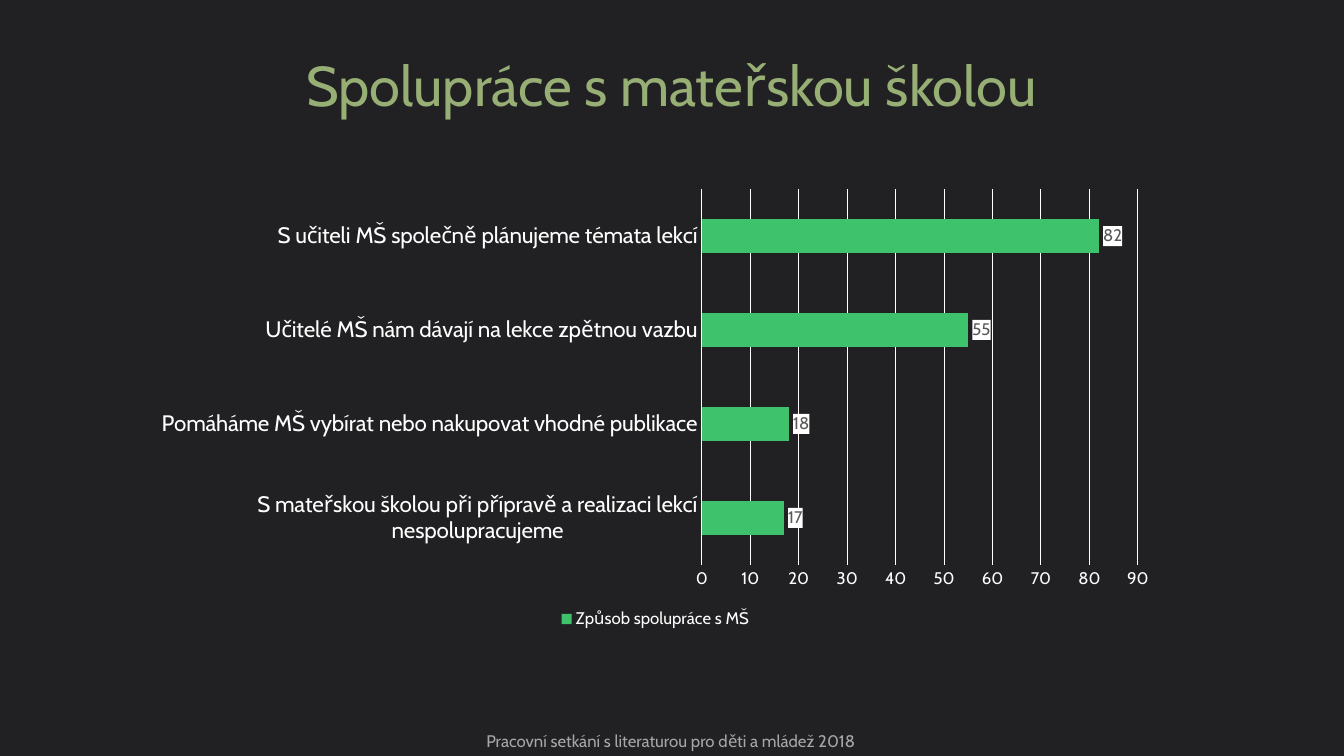
from dataclasses import dataclass

from lxml.etree import fromstring
from pptx import Presentation
from pptx.chart.data import CategoryChartData
from pptx.dml.color import RGBColor
from pptx.enum.chart import XL_CHART_TYPE, XL_LABEL_POSITION, XL_LEGEND_POSITION, XL_TICK_MARK
from pptx.enum.text import MSO_ANCHOR, PP_ALIGN
from pptx.oxml.ns import qn
from pptx.util import Emu, Pt

TITLE = "Spolupráce s mateřskou školou"
FOOTER = "Pracovní setkání s literaturou pro děti a mládež 2018"
SERIES = "Způsob spolupráce s MŠ"
ANSWERS = [
    ("S mateřskou školou při přípravě a realizaci lekcí nespolupracujeme", 17),
    ("Pomáháme MŠ vybírat nebo nakupovat vhodné publikace", 18),
    ("Učitelé MŠ nám dávají na lekce zpětnou vazbu", 55),
    ("S učiteli MŠ společně plánujeme témata lekcí", 82),
]

# left, top, width, height in px
SLIDE_SIZE = (1344, 756)
TITLE_BOX = (101, 31, 1141, 107)
FOOTER_BOX = (-1, 716, 1344, 40)
CHART_BOX = (142, 179, 1027, 454)
PLOT_BOX = (702, 189, 436, 376)


@dataclass(frozen=True)
class Theme:
    font: str = "Cabin"
    background: str = "212123"
    title: str = "97AF75"
    footer: str = "A6A6A6"
    light: str = "FFFFFF"
    bar: str = "3EC26C"
    label: str = "595959"
    outline: str = "404040"
    title_size: int = 40
    category_size: int = 16
    small_size: int = 12
    base_size: int = 10
    line: float = 0.75


THEME = Theme()
A_NS = 'xmlns:a="http://schemas.openxmlformats.org/drawingml/2006/main"'
C_NS = 'xmlns:c="http://schemas.openxmlformats.org/drawingml/2006/chart"'


def px(n):
    return Emu(round(n * 914400 / 100.8))


def rgb(value):
    return RGBColor.from_string(value)


def style_font(font, size, color):
    font.name = THEME.font
    font.size = Pt(size)
    font.bold = False
    font.color.rgb = rgb(color)


def style_line(line):
    line.color.rgb = rgb(THEME.light)
    line.width = Pt(THEME.line)


def add_text(s, box, text, size, color, anchor):
    tb = s.shapes.add_textbox(*map(px, box))
    tf = tb.text_frame
    tf.word_wrap = True
    tf.vertical_anchor = anchor
    p = tf.paragraphs[0]
    p.alignment = PP_ALIGN.CENTER
    r = p.add_run()
    r.text = text
    style_font(r.font, size, color)
    return r


def add_glow_edge(r):
    """Give the run a faint outline and a soft drop shadow."""
    rPr = r.font._element
    rPr.insert(0, fromstring(
        f'<a:ln {A_NS} w="{Pt(THEME.line)}"><a:solidFill><a:srgbClr val="{THEME.outline}">'
        '<a:alpha val="10000"/></a:srgbClr></a:solidFill></a:ln>'))
    rPr.find(qn("a:solidFill")).addnext(fromstring(
        f'<a:effectLst {A_NS}><a:outerShdw blurRad="38100" dist="25400" dir="2700000">'
        '<a:srgbClr val="000000"><a:alpha val="60000"/></a:srgbClr>'
        '</a:outerShdw></a:effectLst>'))


def place_plot(chart):
    """Fix the inner plot area at PLOT_BOX, as fractions of CHART_BOX."""
    left, top, width, height = CHART_BOX
    x, y, w, h = PLOT_BOX
    parts = {"x": (x - left) / width, "y": (y - top) / height, "w": w / width, "h": h / height}
    values = "".join(f'<c:{k} val="{v:.4f}"/>' for k, v in parts.items())
    plot_area = chart._chartSpace.chart.plotArea
    for old in plot_area.findall(qn("c:layout")):
        plot_area.remove(old)
    plot_area.insert(0, fromstring(
        f'<c:layout {C_NS}><c:manualLayout><c:layoutTarget val="inner"/>'
        f'<c:xMode val="edge"/><c:yMode val="edge"/>{values}</c:manualLayout></c:layout>'))


def add_answers_chart(s):
    data = CategoryChartData()
    data.categories = [answer for answer, _ in ANSWERS]
    data.add_series(SERIES, [count for _, count in ANSWERS])
    chart = s.shapes.add_chart(XL_CHART_TYPE.BAR_CLUSTERED, *map(px, CHART_BOX), data).chart
    style_font(chart.font, THEME.base_size, THEME.light)
    chart.has_title = False
    chart.has_legend = True
    chart.legend.position = XL_LEGEND_POSITION.BOTTOM
    chart.legend.include_in_layout = False
    style_font(chart.legend.font, THEME.small_size, THEME.light)
    place_plot(chart)

    cat_axis, val_axis = chart.category_axis, chart.value_axis
    for axis, size in ((cat_axis, THEME.category_size), (val_axis, THEME.small_size)):
        axis.major_tick_mark = axis.minor_tick_mark = XL_TICK_MARK.NONE
        style_font(axis.tick_labels.font, size, THEME.light)
    style_line(cat_axis.format.line)
    val_axis.format.line.fill.background()
    val_axis.minimum_scale, val_axis.maximum_scale, val_axis.major_unit = 0, 90, 10
    style_line(val_axis.major_gridlines.format.line)

    plot = chart.plots[0]
    plot.gap_width = 182
    plot.vary_by_categories = False
    series = plot.series[0]
    series.format.fill.solid()
    series.format.fill.fore_color.rgb = rgb(THEME.bar)
    labels = series.data_labels
    labels.show_value = True
    labels.position = XL_LABEL_POSITION.OUTSIDE_END
    style_font(labels.font, THEME.small_size, THEME.label)
    labels._element.find(qn("c:txPr")).addprevious(fromstring(
        f'<c:spPr {C_NS} {A_NS}><a:solidFill><a:srgbClr val="{THEME.light}"/></a:solidFill></c:spPr>'))


def main():
    prs = Presentation()
    prs.slide_width, prs.slide_height = map(px, SLIDE_SIZE)
    s = prs.slides.add_slide(prs.slide_layouts[6])
    s.background.fill.solid()
    s.background.fill.fore_color.rgb = rgb(THEME.background)
    title = add_text(s, TITLE_BOX, TITLE, THEME.title_size, THEME.title, MSO_ANCHOR.MIDDLE)
    add_glow_edge(title)
    add_text(s, FOOTER_BOX, FOOTER, THEME.small_size, THEME.footer, MSO_ANCHOR.BOTTOM)
    add_answers_chart(s)
    prs.save("out.pptx")


if __name__ == "__main__":
    main()
